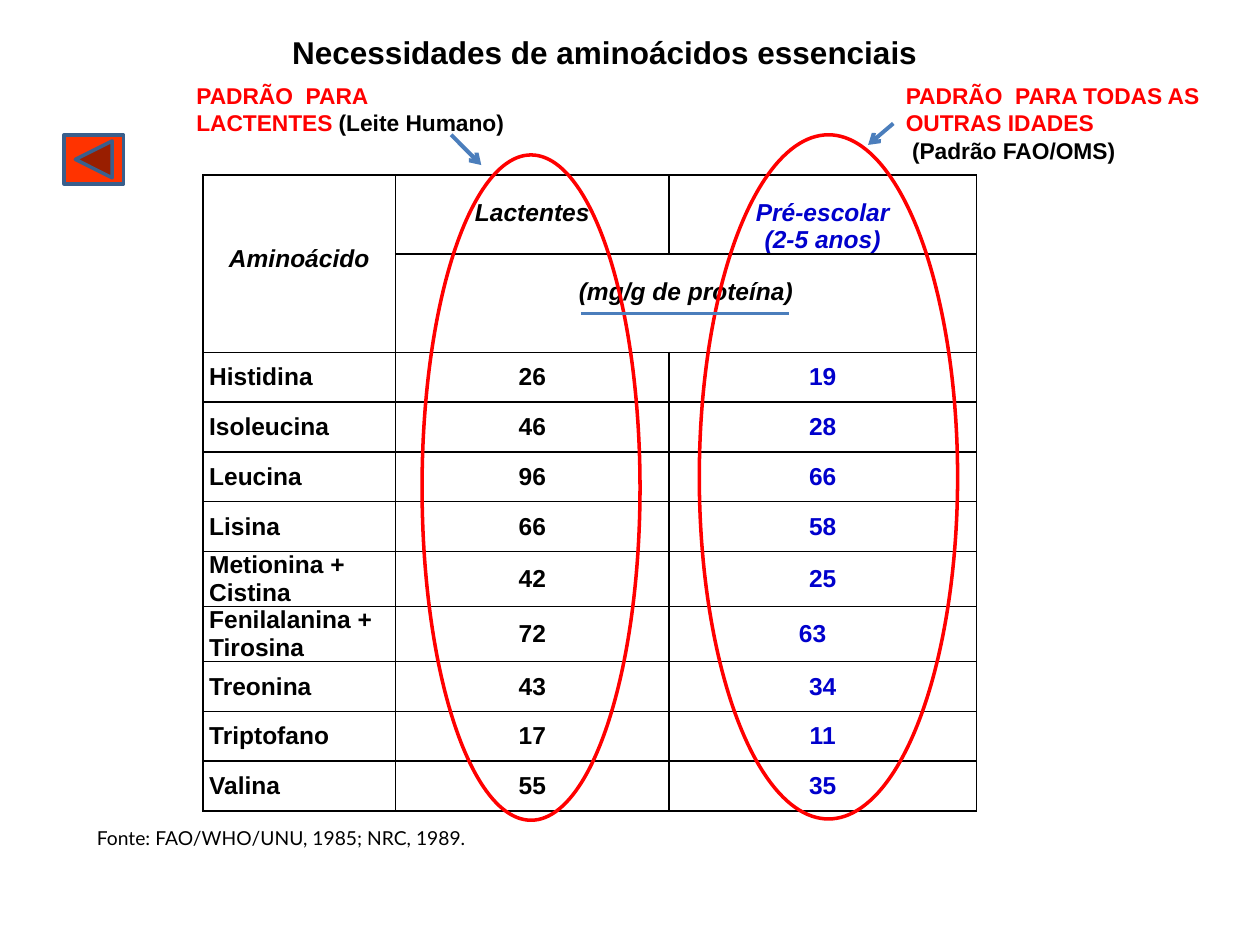
from lxml import etree
from pptx import Presentation
from pptx.dml.color import RGBColor
from pptx.enum.shapes import MSO_CONNECTOR, MSO_SHAPE
from pptx.enum.text import MSO_ANCHOR, MSO_AUTO_SIZE, PP_ALIGN
from pptx.oxml.ns import qn
from pptx.util import Inches, Pt

TOP, MID = MSO_ANCHOR.TOP, MSO_ANCHOR.MIDDLE
LEFT, CENTER = PP_ALIGN.LEFT, PP_ALIGN.CENTER
OVAL = MSO_SHAPE.OVAL
BACK = MSO_SHAPE.ACTION_BUTTON_BACK_OR_PREVIOUS
LINE = MSO_CONNECTOR.STRAIGHT

HEX = {"black": "000000", "white": "FFFFFF", "red": "FF0000", "blue": "0000CC",
       "arrow": "4B7EBC", "button": "FF3300", "edge": "3A5F8C"}

TITLE = "Necessidades de aminoácidos essenciais"
SOURCE = "Fonte: FAO/WHO/UNU, 1985; NRC, 1989."
NEEDS = [
    ("Histidina", 26, 19), ("Isoleucina", 46, 28), ("Leucina", 96, 66),
    ("Lisina", 66, 58), ("Metionina + Cistina", 42, 25),
    ("Fenilalanina + Tirosina", 72, 63), ("Treonina", 43, 34),
    ("Triptofano", 17, 11), ("Valina", 55, 35),
]
# row, column, lines, colour, top margin
HEADS = [
    (0, 0, ["Aminoácido"], "black", 0.56),
    (0, 1, ["Lactentes"], "black", 0.19),
    (0, 2, ["Pré-escolar", "(2-5 anos)"], "blue", 0.19),
    (1, 1, ["(mg/g de proteína)"], "black", 0.19),
]
# box, paragraphs of (text, colour) runs
LABELS = [
    ((1.46, 0.6, 2.68, 0.54),
     [[("PADRÃO  PARA LACTENTES ", "red"), ("(Leite Humano)", "black")]]),
    ((7.09, 0.6, 2.91, 0.76),
     [[("PADRÃO  PARA TODAS AS OUTRAS IDADES", "red")],
      [(" (Padrão FAO/OMS)", "black")]]),
]
# preset, box, fill, line
SHAPES = [
    (OVAL, (5.55, 1.07, 2.05, 5.43), None, "red"),
    (OVAL, (3.35, 1.23, 1.73, 5.28), None, "red"),
    (BACK, (0.51, 1.07, 0.47, 0.39), "button", "edge"),
]
# ends, width, arrowhead
LINES = [
    ((3.58, 1.07, 3.82, 1.31), 2.25, True),
    ((7.09, 0.98, 6.89, 1.15), 2.25, True),
    ((4.61, 2.49, 6.26, 2.49), 1.5, False),
]
COLS = [1.53, 2.17, 2.44]
HEAD_ROWS = [0.62, 0.78]
ROW, TALL = 0.395, 0.435


def rgb(name):
    return RGBColor.from_string(HEX[name])


def inches(nums):
    return [Inches(n) for n in nums]


def write(frame, paras, size, align=LEFT, font="Arial", bold=True, italic=False):
    """Fill a text frame with paragraphs of (text, colour) runs."""
    look = {"size": Pt(size), "name": font, "bold": bold, "italic": italic}
    for i, runs in enumerate(paras):
        para = frame.add_paragraph() if i else frame.paragraphs[0]
        para.alignment = align
        for text, color in runs:
            run = para.add_run()
            run.text = text
            run.font.color.rgb = rgb(color)
            for key, value in look.items():
                setattr(run.font, key, value)


def border(cell):
    props = cell._tc.get_or_add_tcPr()
    for side in ("a:lnL", "a:lnR", "a:lnT", "a:lnB"):
        edge = etree.SubElement(props, qn(side), w=str(Pt(1)))
        fill = etree.SubElement(edge, qn("a:solidFill"))
        etree.SubElement(fill, qn("a:srgbClr"), val=HEX["black"])


def add_text(slide, box, paras, size, **look):
    frame = slide.shapes.add_textbox(*inches(box)).text_frame
    frame.word_wrap = True
    write(frame, paras, size, **look)


def add_title(slide):
    title = slide.shapes.title
    title.left, title.top, title.width, title.height = inches((0.47, 0.21, 8.66, 0.4))
    frame = title.text_frame
    frame.auto_size = MSO_AUTO_SIZE.NONE
    frame.vertical_anchor = MID
    write(frame, [[(TITLE, "black")]], 18, CENTER)


def add_needs(slide):
    rows = HEAD_ROWS + [TALL if "+" in need[0] else ROW for need in NEEDS]
    box = inches((1.61, 1.39, sum(COLS), sum(rows)))
    table = slide.shapes.add_table(len(rows), len(COLS), *box).table
    table.first_row = table.horz_banding = False
    for col, width in zip(table.columns, COLS):
        col.width = Inches(width)
    for row, height in zip(table.rows, rows):
        row.height = Inches(height)
    for cell in table.iter_cells():
        border(cell)
        cell.fill.solid()
        cell.fill.fore_color.rgb = rgb("white")
        cell.margin_left = cell.margin_right = Inches(0.05)
        cell.margin_top = cell.margin_bottom = 0
    table.cell(0, 0).merge(table.cell(1, 0))
    table.cell(1, 1).merge(table.cell(1, 2))

    for r, c, lines, color, gap in HEADS:
        cell = table.cell(r, c)
        cell.margin_top = Inches(gap)
        cell.vertical_anchor = TOP
        write(cell.text_frame, [[(line, color)] for line in lines], 14, CENTER, italic=True)
    for r, need in enumerate(NEEDS, len(HEAD_ROWS)):
        for c, value in enumerate(need):
            cell = table.cell(r, c)
            cell.vertical_anchor = MID
            color = "blue" if c == 2 else "black"
            write(cell.text_frame, [[(str(value), color)]], 14, CENTER if c else LEFT)
            if value == 63:  # sits a little left of its column
                cell.margin_right = Inches(0.21)


def add_shape(slide, kind, box, fill, line):
    shape = slide.shapes.add_shape(kind, *inches(box))
    shape.shadow.inherit = False
    shape.line.color.rgb = rgb(line)
    shape.line.width = Pt(2)
    if fill:
        shape.fill.solid()
        shape.fill.fore_color.rgb = rgb(fill)
    else:
        shape.fill.background()


def add_line(slide, ends, width, head):
    link = slide.shapes.add_connector(LINE, *inches(ends))
    link.line.color.rgb = rgb("arrow")
    link.line.width = Pt(width)
    if head:
        etree.SubElement(link.line._get_or_add_ln(), qn("a:tailEnd"), type="arrow")
    etree.SubElement(link._element.spPr, qn("a:effectLst"))


def main():
    deck = Presentation()
    deck.slide_width, deck.slide_height = inches((10, 7.5))
    slide = deck.slides.add_slide(deck.slide_layouts[5])
    add_needs(slide)
    add_title(slide)
    add_text(slide, (0.67, 6.51, 4.56, 0.29), [[(SOURCE, "black")]], 11,
             font="Lato", bold=False)
    for box, paras in LABELS:
        add_text(slide, box, paras, 13)
    for item in SHAPES:
        add_shape(slide, *item)
    for item in LINES:
        add_line(slide, *item)
    deck.save("out.pptx")


if __name__ == "__main__":
    main()
